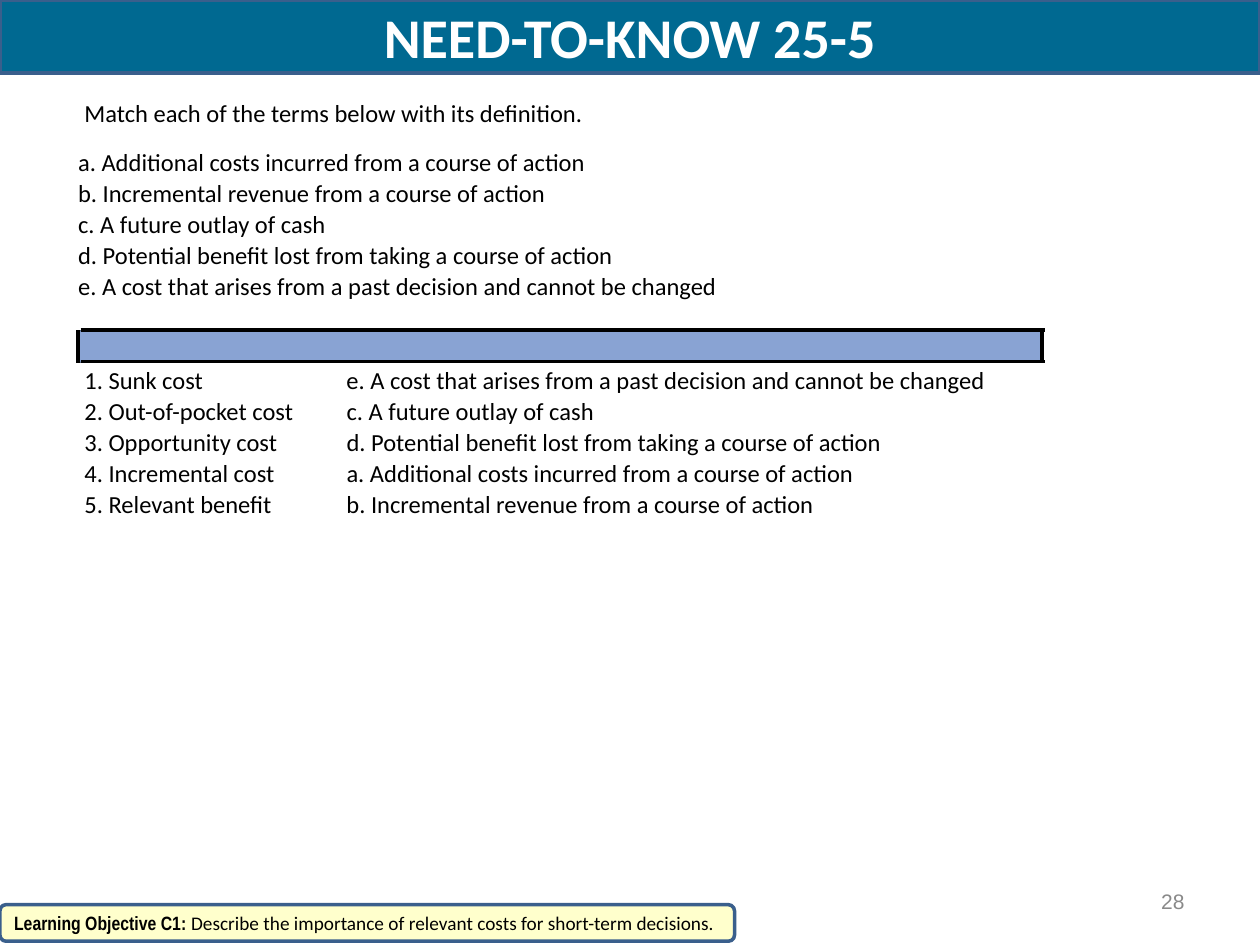
from lxml import etree
from pptx import Presentation
from pptx.dml.color import RGBColor
from pptx.enum.shapes import MSO_CONNECTOR, MSO_SHAPE
from pptx.enum.text import MSO_ANCHOR, PP_ALIGN
from pptx.oxml.ns import qn
from pptx.util import Inches, Pt

STRAIGHT = MSO_CONNECTOR.STRAIGHT
RECTANGLE, ROUNDED = MSO_SHAPE.RECTANGLE, MSO_SHAPE.ROUNDED_RECTANGLE
TOP, MIDDLE = MSO_ANCHOR.TOP, MSO_ANCHOR.MIDDLE
LEFT, CENTER, RIGHT = PP_ALIGN.LEFT, PP_ALIGN.CENTER, PP_ALIGN.RIGHT

TITLE = "NEED-TO-KNOW 25-5"
PROMPT = "Match each of the terms below with its definition."
DEFINITIONS = {
    "a": ("Additional costs incurred from a course of action", 4.35),
    "b": ("Incremental revenue from a course of action", 4),
    "c": ("A future outlay of cash", 2.12),
    "d": ("Potential benefit lost from taking a course of action", 4.57),
    "e": ("A cost that arises from a past decision and cannot be changed", 5.55),
}
ANSWERS = [
    ("Sunk cost", "e", 1.23),
    ("Out-of-pocket cost", "c", 2.09),
    ("Opportunity cost", "d", 1.9),
    ("Incremental cost", "a", 1.89),
    ("Relevant benefit", "b", 1.88),
]
OBJECTIVE = ("Learning Objective C1: ",
             "Describe the importance of relevant costs for short-term decisions.")
PAGE_NUMBER = "28"

THEME = {
    "colors": {"teal": "006991", "edge": "3A5F8C", "cream": "FFFFCC", "bar": "89A3D3",
               "black": "000000", "white": "FFFFFF", "gray": "898989"},
    "text": {
        "title": {"name": "Calibri", "size": 32, "bold": True, "color": "white"},
        "body": {"name": "Calibri", "size": 14, "bold": False, "color": "black"},
        "label": {"name": "Arial Narrow", "size": 11, "bold": True, "color": "black"},
        "note": {"name": "Calibri", "size": 11, "bold": False, "color": "black"},
        "number": {"name": "Arial", "size": 12, "bold": False, "color": "gray"},
    },
}
FIRST_DEFINITION, LAST_DEFINITION = 1.17, 2.15
FIRST_ANSWER, LAST_ANSWER = 2.9, 3.88
LIST_LEFT, TERM_LEFT, ANSWER_LEFT = 0.62, 0.67, 2.75
ANSWER_STRETCH = 1.09
BAR = (0.62, 2.62, 7.66, 0.26)
RULE = 0.01
BAR_EDGES = [
    (0.62, 2.62, 0, 0.26),
    (8.27, 2.63, 0, 0.25),
    (0.64, 2.62, 7.65, 0),
    (0.64, 2.87, 7.65, 0),
]


def color(name):
    """Return the theme colour with this name."""
    return RGBColor.from_string(THEME["colors"][name])


def write(box, spans, anchor=MIDDLE, align=LEFT):
    """Fill a box with one paragraph of styled spans."""
    frame = box.text_frame
    frame.word_wrap = True
    frame.vertical_anchor = anchor
    para = frame.paragraphs[0]
    para.alignment = align
    for text, style in spans:
        span = para.add_run()
        span.text = text
        look = THEME["text"][style]
        values = {"name": look["name"], "size": Pt(look["size"]), "bold": look["bold"]}
        for key, value in values.items():
            setattr(span.font, key, value)
        span.font.color.rgb = color(look["color"])


def add_panel(page, kind, place, fill, edge=None):
    """Add a filled shape, outlined when an edge colour is given."""
    panel = page.shapes.add_shape(kind, *map(Inches, place))
    panel.shadow.inherit = False
    panel.fill.solid()
    panel.fill.fore_color.rgb = color(fill)
    if edge:
        panel.line.color.rgb = color(edge)
        panel.line.width = Pt(2)
    else:
        panel.line.fill.background()
    return panel


def add_bar_edge(page, left, top, width, height):
    """Add a hairline and the thin rule that thickens it."""
    ends = (left, top, left + width, top + height)
    hairline = page.shapes.add_connector(STRAIGHT, *map(Inches, ends))
    hairline.line.color.rgb = color("black")
    hairline.line.width = Pt(0)
    etree.SubElement(hairline._element.spPr, qn("a:effectLst"))
    add_panel(page, RECTANGLE, (left, top, width or RULE, height or RULE), "black")


def add_line_of_text(page, text, left, top, width, height=0.27):
    """Add a body text box without insets."""
    box = page.shapes.add_textbox(*map(Inches, (left, top, width, height)))
    for side in ("left", "top", "right", "bottom"):
        setattr(box.text_frame, f"margin_{side}", 0)
    write(box, [(text, "body")], TOP)


def row_tops(first, last, count):
    """Return evenly spaced tops from first to last."""
    return [first + (last - first) * row / (count - 1) for row in range(count)]


def main():
    """Build the matching exercise page."""
    deck = Presentation()
    deck.slide_width, deck.slide_height = Inches(10), Inches(7.5)
    page = deck.slides.add_slide(deck.slide_layouts[6])

    banner = add_panel(page, RECTANGLE, (0, 0, 10, 0.58), "teal", "edge")
    write(banner, [(TITLE, "title")], align=CENTER)

    number = page.shapes.add_textbox(*map(Inches, (7.17, 6.95, 2.33, 0.4)))
    write(number, [(PAGE_NUMBER, "number")], align=RIGHT)

    objective = add_panel(page, ROUNDED, (0, 7.18, 5.83, 0.29), "cream", "edge")
    write(objective, list(zip(OBJECTIVE, ("label", "note"))))

    add_panel(page, RECTANGLE, BAR, "bar")
    add_line_of_text(page, PROMPT, TERM_LEFT, 0.78, 4.56)

    tops = row_tops(FIRST_ANSWER, LAST_ANSWER, len(ANSWERS))
    for rank, (top, (term, letter, width)) in enumerate(zip(tops, ANSWERS), 1):
        text, text_width = DEFINITIONS[letter]
        add_line_of_text(page, f"{rank}. {term}", TERM_LEFT, top, width)
        add_line_of_text(page, f"{letter}. {text}", ANSWER_LEFT, top,
                         text_width * ANSWER_STRETCH)

    for edge in BAR_EDGES:
        add_bar_edge(page, *edge)

    tops = row_tops(FIRST_DEFINITION, LAST_DEFINITION, len(DEFINITIONS))
    for top, (letter, (text, width)) in zip(tops, DEFINITIONS.items()):
        add_line_of_text(page, f"{letter}. {text}", LIST_LEFT, top, width, 0.24)

    deck.save("out.pptx")


if __name__ == "__main__":
    main()
